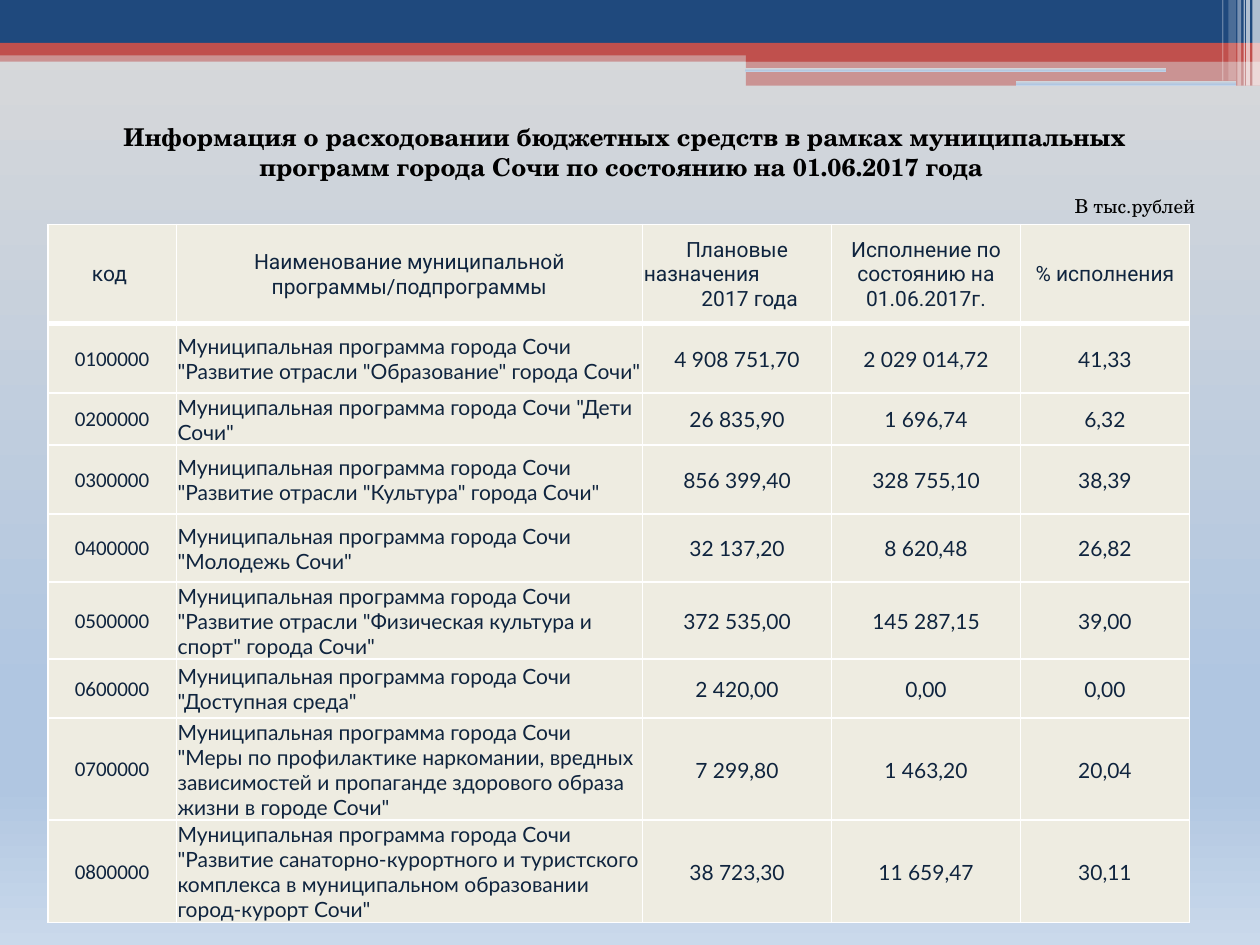
from lxml.etree import SubElement
from pptx import Presentation
from pptx.dml.color import RGBColor
from pptx.enum.shapes import MSO_SHAPE
from pptx.enum.text import MSO_ANCHOR, MSO_AUTO_SIZE, PP_ALIGN
from pptx.oxml import parse_xml
from pptx.oxml.ns import nsdecls, qn
from pptx.util import Pt

PX = 9144  # EMU per px, 100 px to the inch
COLORS = {"navy": "1F497D", "red": "C0504D", "white": "FFFFFF",
          "cream": "EEECE1", "ink": "0F243E", "black": "000000"}
SKY = [(0, "D9D9D9"), (74, "B0C6E1"), (83, "B0C6E1"), (100, "CAD9EB")]
LEFT, MID = PP_ALIGN.LEFT, PP_ALIGN.CENTER


def write(frame, text, font="Lato", size=12, color="ink", bold=False, align=LEFT):
    """Fill a text frame, one paragraph for each line of text."""
    frame.word_wrap = True
    for i, line in enumerate(text.split("\n")):
        para = frame.paragraphs[0] if i == 0 else frame.add_paragraph()
        para.alignment = align
        run = para.add_run()
        run.text = line
        run.font.name, run.font.size, run.font.bold = font, Pt(size), bold
        run.font.color.rgb = RGBColor.from_string(COLORS[color])


class Page:
    def __init__(self, deck):
        self.slide = deck.slides.add_slide(deck.slide_layouts[6])
        self.shapes = self.slide.shapes
        self.shade(self.slide.background.fill, self.slide.element)

    def shade(self, fill, root):
        """Give a fill the vertical sky gradient."""
        fill.solid()
        fill.fore_color.rgb = RGBColor.from_string(COLORS["white"])
        old = root.xpath(".//a:solidFill")[0]
        stops = "".join(f'<a:gs pos="{pos * 1000}"><a:srgbClr val="{hue}"/></a:gs>'
                        for pos, hue in SKY)
        new = parse_xml(f'<a:gradFill {nsdecls("a")} rotWithShape="1"><a:gsLst>{stops}'
                        '</a:gsLst><a:lin ang="5400000" scaled="0"/></a:gradFill>')
        old.getparent().replace(old, new)

    def shape(self, kind, box):
        item = self.shapes.add_shape(kind, *(n * PX for n in box))
        item.shadow.inherit = False
        item.line.fill.background()
        return item

    def bar(self, box, color, alpha=100):
        item = self.shape(MSO_SHAPE.RECTANGLE, box)
        item.fill.solid()
        item.fill.fore_color.rgb = RGBColor.from_string(COLORS[color])
        if alpha < 100:
            tone = item.element.xpath("./p:spPr/a:solidFill/a:srgbClr")[0]
            SubElement(tone, qn("a:alpha"), val=str(alpha * 1000))

    def slot(self, box):
        item = self.shape(MSO_SHAPE.ROUNDED_RECTANGLE, box)
        self.shade(item.fill, item.element)

    def text(self, box, text, **style):
        frame = self.shapes.add_textbox(*(n * PX for n in box)).text_frame
        write(frame, text, font="TeX Gyre Schola", color="black", **style)
        frame.auto_size = MSO_AUTO_SIZE.SHAPE_TO_FIT_TEXT

    def cell(self, cell, text, top=1, base=1, **style):
        cell.margin_left = cell.margin_right = cell.margin_top = PX
        cell.margin_bottom = 0
        cell.vertical_anchor = MSO_ANCHOR.MIDDLE
        write(cell.text_frame, text, **style)
        props = cell._tc.get_or_add_tcPr()
        for side, width in zip("LRTB", (1, 1, top, base)):
            line = SubElement(props, qn(f"a:ln{side}"), w=str(Pt(width)))
            fill = SubElement(line, qn("a:solidFill"))
            SubElement(fill, qn("a:srgbClr"), val=COLORS["white"])
        cell.fill.solid()
        cell.fill.fore_color.rgb = RGBColor.from_string(COLORS["cream"])

    def table(self, box, cols, rows, head, data):
        grid = self.shapes.add_table(len(rows), len(cols), *(n * PX for n in box)).table
        grid.first_row = grid.horz_banding = False
        for col, width in zip(grid.columns, cols):
            col.width = width * PX
        for row, height in zip(grid.rows, rows):
            row.height = height * PX
        for c, label in enumerate(head):
            self.cell(grid.cell(0, c), label, base=3, font="Roboto", align=MID)
        for r, line in enumerate(data, 1):
            for c, value in enumerate(line):
                self.cell(grid.cell(r, c), value, top=3 if r == 1 else 1,
                          font="Calibri" if c == 0 else "Lato",
                          align=LEFT if c == 1 else MID)
        return grid


HEAD = ["код ", "Наименование муниципальной программы/подпрограммы",
        "Плановые\nназначения\n2017 года",
        "Исполнение по состоянию на 01.06.2017г.", "% исполнения"]
CITY = "Муниципальная программа города Сочи "
DATA = [
    ('"Развитие отрасли "Образование" города Сочи"', "4 908 751,70", "2 029 014,72", "41,33"),
    ('"Дети Сочи"', "26 835,90", "1 696,74", "6,32"),
    ('"Развитие отрасли "Культура" города Сочи"', "856 399,40", "328 755,10", "38,39"),
    ('"Молодежь Сочи"', "32 137,20", "8 620,48", "26,82"),
    ('"Развитие отрасли "Физическая культура и спорт" города Сочи"',
     "372 535,00", "145 287,15", "39,00"),
    ('"Доступная среда"', "2 420,00", "0,00", "0,00"),
    ('"Меры по профилактике наркомании, вредных зависимостей и пропаганде '
     'здорового образа жизни в городе Сочи"', "7 299,80", "1 463,20", "20,04"),
    ('"Развитие санаторно-курортного и туристского комплекса в муниципальном '
     'образовании город-курорт Сочи"', "38 723,30", "11 659,47", "30,11"),
]


def main():
    deck = Presentation()
    deck.slide_width, deck.slide_height = 1000 * PX, 750 * PX
    page = Page(deck)

    # Top band
    page.bar((0, 40, 1000, 9), "red", 50)
    page.bar((0, 0, 1000, 34), "navy")
    page.bar((0, 34, 1000, 10), "red")
    page.bar((592, 39, 408, 10), "red")
    page.bar((592, 48, 408, 20), "red", 50)
    page.slot((591, 54, 335, 3))
    page.slot((806, 64, 175, 4))

    # Pale stripes at the right edge
    for left, width, height, alpha in [(994, 6, 68, 65), (989, 3, 68, 65), (987, 1, 68, 60),
                                       (982, 3, 68, 40), (975, 6, 64, 20), (970, 1, 64, 30)]:
        page.bar((left, 0, width, height), "white", alpha)

    # Programme table
    data = [(f"0{n}00000", CITY + name, *sums) for n, (name, *sums) in enumerate(DATA, 1)]
    grid = page.table((38, 178, 906, 553), (102, 370, 150, 150, 134),
                      (79, 55, 41, 55, 54, 56, 47, 65, 79), HEAD, data)
    grid.cell(2, 1).vertical_anchor = MSO_ANCHOR.TOP
    plan = grid.cell(0, 2).text_frame.paragraphs
    plan[1].alignment = LEFT
    plan[2]._p.get_or_add_pPr().set("marL", str(20 * PX))

    # Title and unit
    page.text((51, 92, 890, 57), "Информация о расходовании бюджетных средств в рамках "
              "муниципальных программ города Сочи по состоянию на 01.06.2017 года ",
              size=14, bold=True, align=MID)
    page.text((843, 149, 157, 29), "В тыс.рублей", size=11)

    deck.save("out.pptx")


if __name__ == "__main__":
    main()
